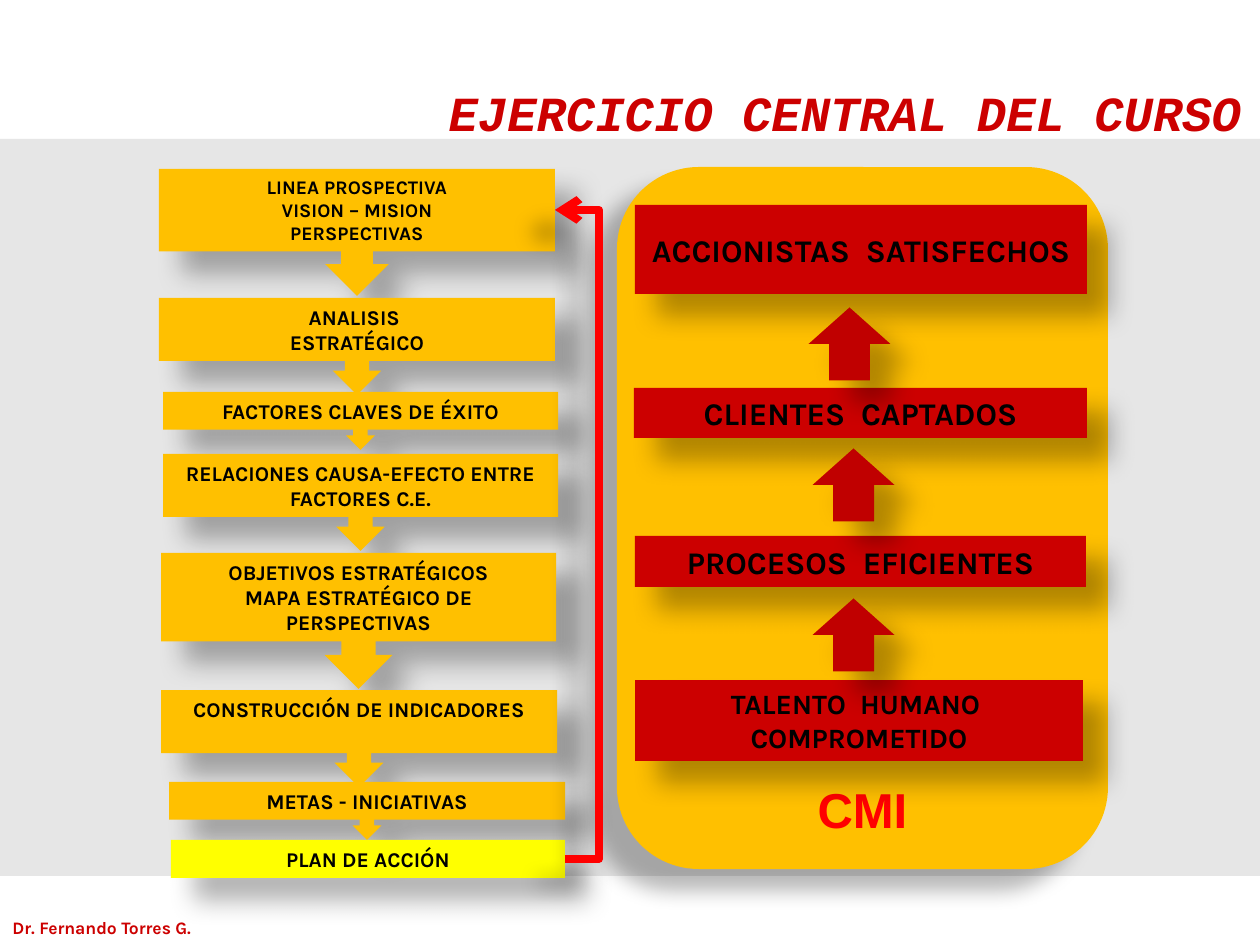
from lxml import etree
from pptx import Presentation
from pptx.dml.color import RGBColor
from pptx.enum.shapes import MSO_CONNECTOR, MSO_SHAPE
from pptx.enum.text import MSO_ANCHOR, MSO_AUTO_SIZE, PP_ALIGN
from pptx.oxml.ns import qn
from pptx.util import Emu, Pt

PX = 914400 / 126
RECTANGLE, ROUNDED = MSO_SHAPE.RECTANGLE, MSO_SHAPE.ROUNDED_RECTANGLE
CALLOUT, LEFT_ARROW = MSO_SHAPE.DOWN_ARROW_CALLOUT, MSO_SHAPE.LEFT_ARROW
ELBOW = MSO_CONNECTOR.ELBOW
TOP, MIDDLE, BOTTOM = MSO_ANCHOR.TOP, MSO_ANCHOR.MIDDLE, MSO_ANCHOR.BOTTOM
LEFT, CENTER, RIGHT = PP_ALIGN.LEFT, PP_ALIGN.CENTER, PP_ALIGN.RIGHT
NO_AUTOFIT = MSO_AUTO_SIZE.NONE

COLORS = {
    "band": "E6E6E6", "amber": "FFC000", "yellow": "FFFF00", "red": "CC0000",
    "arrow": "C00000", "bright": "FF0000", "black": "000000",
    "outline": "FCFCFC",
}
# Opacity %, blur pt, distance pt, direction in degrees
BLOCK_SHADOW = (30, 15, 18, 45)
PANEL_SHADOW = (28, 11.8, 19.7, 141)
TITLE_SHADOW = (50, 2, 3, 45)

# Text, left, top, width, height, font size
STEPS = [
    ("LINEA PROSPECTIVA\nVISION – MISION\nPERSPECTIVAS", 159, 169, 396, 127, 11),
    ("ANALISIS \nESTRATÉGICO", 159, 298, 396, 97, 12),
    ("FACTORES CLAVES DE ÉXITO", 163, 392, 395, 58, 12),
    ("RELACIONES CAUSA-EFECTO ENTRE FACTORES C.E.", 163, 454, 395, 97, 12),
    ("OBJETIVOS ESTRATÉGICOS\nMAPA ESTRATÉGICO DE PERSPECTIVAS",
     161, 553, 395, 136, 12),
    ("CONSTRUCCIÓN DE INDICADORES", 161, 690, 396, 97, 12),
    ("METAS - INICIATIVAS", 169, 782, 396, 58, 12),
]
PERSPECTIVES = [
    ("ACCIONISTAS  SATISFECHOS", 635, 205, 452, 89, 18),
    ("CLIENTES  CAPTADOS", 634, 388, 453, 50, 18),
    ("PROCESOS  EFICIENTES", 635, 536, 451, 51, 18),
    ("TALENTO  HUMANO  COMPROMETIDO", 635, 680, 448, 81, 16),
]
UP_ARROWS = [(813, 303), (817, 444), (817, 594)]


def px(*lengths):
    return [Emu(round(length * PX)) for length in lengths]


def rgb(name):
    return RGBColor.from_string(COLORS[name])


def effect_list(shadow):
    """Build an effect list with one outer shadow."""
    opacity, blur, distance, direction = shadow
    effects = etree.Element(qn("a:effectLst"))
    outer = etree.SubElement(
        effects, qn("a:outerShdw"), blurRad=str(round(blur * 12700)),
        dist=str(round(distance * 12700)), dir=str(direction * 60000),
        algn="ctr", rotWithShape="0")
    color = etree.SubElement(outer, qn("a:srgbClr"), val=COLORS["black"])
    etree.SubElement(color, qn("a:alpha"), val=str(opacity * 1000))
    return effects


def write(shape, text, size, color, font="Karla", anchor=TOP, align=CENTER,
          wrap=True, italic=False):
    """Set and format the text; return its runs."""
    frame = shape.text_frame
    frame.text = text
    frame.word_wrap = wrap
    frame.auto_size = NO_AUTOFIT
    frame.vertical_anchor = anchor
    runs = []
    for paragraph in frame.paragraphs:
        paragraph.alignment = align
        for run in paragraph.runs:
            run.font.size = Pt(size)
            run.font.name = font
            run.font.bold = True
            run.font.italic = italic
            run.font.color.rgb = rgb(color)
            runs.append(run)
    return runs


def add_block(slide, kind, box, fill, shadow=None):
    shape = slide.shapes.add_shape(kind, *px(*box))
    shape.fill.solid()
    shape.fill.fore_color.rgb = rgb(fill)
    shape.line.fill.background()
    shape.shadow.inherit = False
    if shadow:
        properties = shape.element.spPr
        properties.replace(properties.find(qn("a:effectLst")),
                           effect_list(shadow))
    return shape


def add_perspective(slide, text, *box, size):
    """Add a red block whose letters have a thin light outline."""
    block = add_block(slide, RECTANGLE, box, "red", BLOCK_SHADOW)
    for run in write(block, text, size, "black", anchor=MIDDLE):
        line = etree.Element(qn("a:ln"), w="17780")
        fill = etree.SubElement(line, qn("a:solidFill"))
        etree.SubElement(fill, qn("a:srgbClr"), val=COLORS["outline"])
        run.font.fill.solid()
        run.font.color.rgb = rgb("black")
        run._r.get_or_add_rPr().insert(0, line)


def add_feedback_line(slide):
    """Lead from the action plan back up to the first step."""
    line = slide.shapes.add_connector(ELBOW, *px(565, 859, 555, 210))
    line.line.color.rgb = rgb("bright")
    line.line.width = Pt(4.5)
    properties = line.element.spPr
    etree.SubElement(properties.find(qn("a:ln")), qn("a:tailEnd"), type="arrow")
    guides = properties.find(qn("a:prstGeom")).find(qn("a:avLst"))
    etree.SubElement(guides, qn("a:gd"), name="adj1", fmla="val -340000")
    properties.append(effect_list(PANEL_SHADOW))


def add_title(slide):
    title = slide.shapes.title
    title.left, title.top, title.width, title.height = px(192, 76, 1062, 72)
    for run in write(title, "EJERCICIO CENTRAL DEL CURSO", 28, "red",
                     "Courier New", align=RIGHT, italic=True):
        run_properties = run._r.get_or_add_rPr()
        run_properties.find(qn("a:solidFill")).addnext(effect_list(TITLE_SHADOW))
    # Bring the title in front of the band
    slide.shapes.element.append(title.element)


def main():
    presentation = Presentation()
    presentation.slide_width, presentation.slide_height = px(1260, 945)
    slide = presentation.slides.add_slide(presentation.slide_layouts[5])

    # Background band and author
    add_block(slide, RECTANGLE, (0, 139, 1260, 737), "band")
    author = slide.shapes.add_textbox(*px(0, 911, 227, 34))
    write(author, "Dr. Fernando Torres G.", 10, "red", align=LEFT, wrap=False)

    # Scorecard panel
    panel = add_block(slide, ROUNDED, (617, 167, 491, 702), "amber", PANEL_SHADOW)
    write(panel, "CMI", 28, "bright", "Arial", BOTTOM)

    # Planning steps
    for text, *box, size in STEPS:
        step = add_block(slide, CALLOUT, box, "amber", BLOCK_SHADOW)
        write(step, text, size, "black")
    plan = add_block(slide, RECTANGLE, (171, 840, 394, 38), "yellow", BLOCK_SHADOW)
    write(plan, "PLAN DE ACCIÓN", 12, "black")
    add_feedback_line(slide)

    # Perspectives and the arrows between them
    for text, *box, size in PERSPECTIVES:
        add_perspective(slide, text, *box, size=size)
    for left, top in UP_ARROWS:
        arrow = add_block(slide, LEFT_ARROW, (left, top, 73, 82), "arrow",
                          BLOCK_SHADOW)
        arrow.rotation = 90

    add_title(slide)
    presentation.save("out.pptx")


if __name__ == "__main__":
    main()
